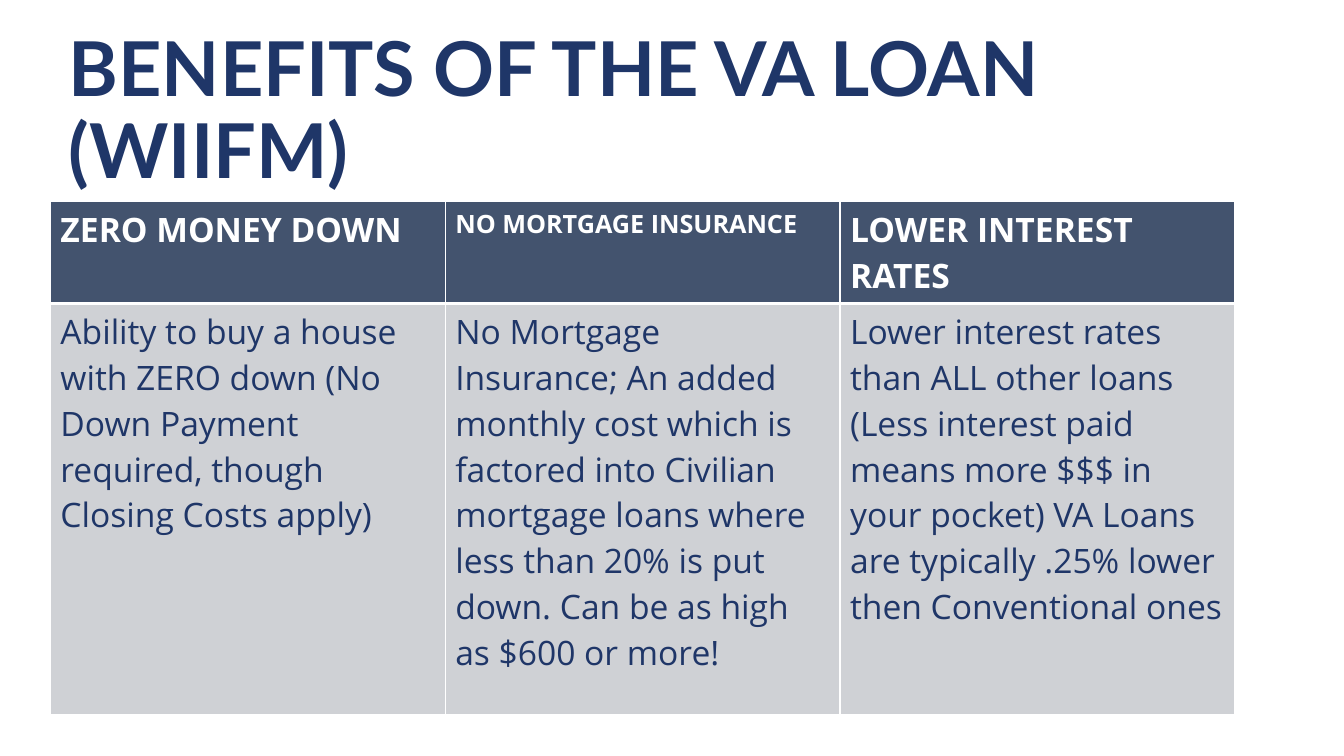
from dataclasses import dataclass

from lxml.etree import SubElement
from pptx import Presentation
from pptx.dml.color import RGBColor
from pptx.enum.text import MSO_ANCHOR as Anchor, MSO_AUTO_SIZE as AutoSize, PP_ALIGN as Align
from pptx.oxml.ns import qn
from pptx.util import Cm, Pt


@dataclass(frozen=True)
class Theme:
    """Colours, fonts and type sizes of the slide."""
    navy: str = "1F3668"
    slate: str = "43536E"
    grey: str = "CFD1D5"
    white: str = "FFFFFF"
    heading_font: str = "Lato"
    body_font: str = "Open Sans"
    title_size: int = 54
    body_size: int = 24
    small_size: int = 18


THEME = Theme()

BENEFITS = [
    ("ZERO MONEY DOWN", THEME.body_size,
     "Ability to buy a house with ZERO down (No Down Payment required, though "
     "Closing Costs apply)"),
    ("NO MORTGAGE INSURANCE", THEME.small_size,
     "No Mortgage Insurance; An added monthly cost which is factored into Civilian "
     "mortgage loans where less than 20% is put down. Can be as high as $600 or more!"),
    ("LOWER INTEREST RATES", THEME.body_size,
     "Lower interest rates than ALL other loans (Less interest paid means more $$$ in "
     "your pocket) VA Loans are typically .25% lower then Conventional ones"),
]


def write(frame, text, *, size=THEME.body_size, font=THEME.body_font,
          color=THEME.navy, bold=False, spacing=1.0):
    """Put one left-aligned formatted paragraph in a text frame."""
    paragraph = frame.paragraphs[0]
    paragraph.alignment = Align.LEFT
    paragraph.line_spacing = spacing
    run = paragraph.add_run()
    run.text = text
    run.font.name = font
    run.font.size = Pt(size)
    run.font.bold = bold
    run.font.color.rgb = RGBColor.from_string(color)


def rule_cell(cell, bottom):
    """Draw white borders round a cell, with the given bottom width in points."""
    properties = cell._tc.get_or_add_tcPr()
    for place, (side, width) in enumerate([("L", 1), ("R", 1), ("T", 1), ("B", bottom)]):
        border = SubElement(properties, qn(f"a:ln{side}"), w=str(Pt(width)))
        fill = SubElement(border, qn("a:solidFill"))
        SubElement(fill, qn("a:srgbClr"), val=THEME.white)
        properties.insert(place, border)


def fill_cell(cell, text, background, bottom=1, **style):
    """Give a cell its background, borders and text."""
    cell.fill.solid()
    cell.fill.fore_color.rgb = RGBColor.from_string(background)
    rule_cell(cell, bottom)
    write(cell.text_frame, text, **style)


def place_title(slide, left, top, width, height):
    """Move the title placeholder to its box and write the heading."""
    title = slide.shapes.title
    title.left, title.top, title.width, title.height = left, top, width, height
    frame = title.text_frame
    frame.word_wrap = True
    frame.auto_size = AutoSize.NONE
    frame.vertical_anchor = Anchor.MIDDLE
    frame.margin_left = frame.margin_right = 0
    write(frame, "BENEFITS OF THE VA LOAN (WIIFM)", size=THEME.title_size,
          font=THEME.heading_font, bold=True, spacing=0.9)


def place_benefits(slide, left, top, width, height):
    """Build the benefits table, one equal column per benefit."""
    table = slide.shapes.add_table(2, len(BENEFITS), left, top, width, height).table
    header_height = Cm(2.54)
    table.rows[0].height = header_height
    table.rows[1].height = height - header_height
    for column, (heading, heading_size, detail) in enumerate(BENEFITS):
        table.columns[column].width = width // len(BENEFITS)
        fill_cell(table.cell(0, column), heading, THEME.slate, bottom=3,
                  size=heading_size, color=THEME.white, bold=True)
        fill_cell(table.cell(1, column), detail, THEME.grey)


def main():
    """Build and save the slide."""
    deck = Presentation()
    deck.slide_width, deck.slide_height = Cm(33.87), Cm(19.05)
    slide = deck.slides.add_slide(deck.slide_layouts[5])
    place_title(slide, Cm(1.73), Cm(1.14), Cm(29.85), Cm(3.43))
    place_benefits(slide, Cm(1.27), Cm(5.08), Cm(29.85), Cm(12.9))
    deck.save("out.pptx")


if __name__ == "__main__":
    main()
